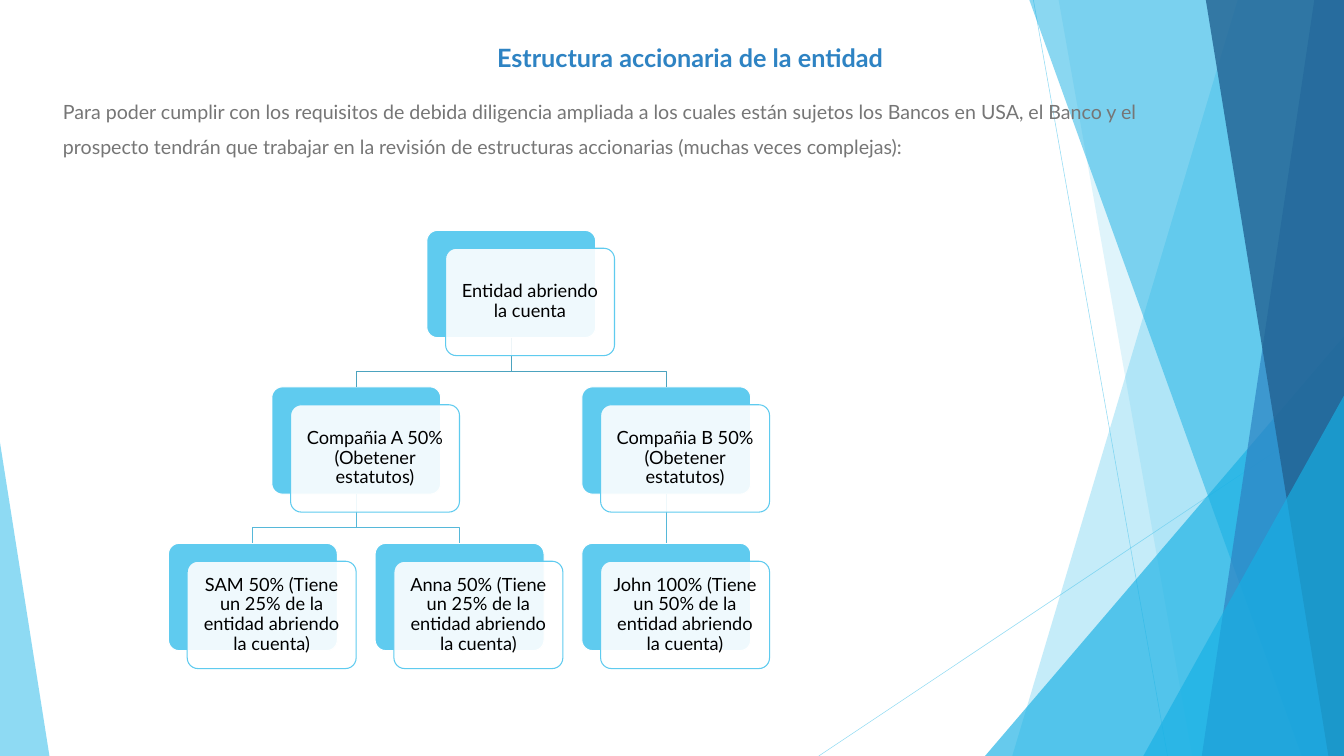
from lxml import etree
from pptx import Presentation
from pptx.dml.color import RGBColor
from pptx.enum.shapes import MSO_CONNECTOR, MSO_SHAPE
from pptx.enum.text import MSO_ANCHOR, MSO_AUTO_SIZE, PP_ALIGN
from pptx.oxml.ns import qn
from pptx.util import Inches, Pt

STRAIGHT = MSO_CONNECTOR.STRAIGHT
TRIANGLE, ROUNDED = MSO_SHAPE.ISOSCELES_TRIANGLE, MSO_SHAPE.ROUNDED_RECTANGLE
TOP, MIDDLE = MSO_ANCHOR.TOP, MSO_ANCHOR.MIDDLE
LEFT, CENTER = PP_ALIGN.LEFT, PP_ALIGN.CENTER
NO_AUTOFIT = MSO_AUTO_SIZE.NONE

SKY = RGBColor(0x5F, 0xCB, 0xEF)
CYAN = RGBColor(0x17, 0xB0, 0xE4)
BLUE = RGBColor(0x2E, 0x83, 0xC3)
NAVY = RGBColor(0x22, 0x62, 0x92)
UPPER_LINK = RGBColor(0x4C, 0xA3, 0xBF)
LOWER_LINK = RGBColor(0x56, 0xB8, 0xD9)
GREY = RGBColor(0x76, 0x76, 0x76)
WHITE = RGBColor(0xFF, 0xFF, 0xFF)
BLACK = RGBColor(0, 0, 0)

# Positions and sizes are percentages of the slide's width and height.
CARD_W, CARD_H = 12.57, 14.2
PANEL_DX, PANEL_DY = 1.4, 2.37
CHART_LEFT, CHART_TOP = 12.53, 30.47
COLUMN_STEP, ROW_STEP = 15.38, 20.7
BEND = 0.68  # share of the gap between rows at which a link turns

TITLE = "Estructura accionaria de la entidad"
INTRO = ("Para poder cumplir con los requisitos de debida diligencia ampliada a los cuales "
         "están sujetos los Bancos en USA, el Banco y el prospecto tendrán que trabajar en "
         "la revisión de estructuras accionarias (muchas veces complejas):")

# holder: (column, row, text)
HOLDERS = {
    "entity": (1.25, 0, "Entidad abriendo la cuenta"),
    "A": (0.5, 1, "Compañia A 50% (Obetener estatutos)"),
    "B": (2, 1, "Compañia B 50% (Obetener estatutos)"),
    "Sam": (0, 2, "SAM 50% (Tiene un 25% de la entidad abriendo la cuenta)"),
    "Anna": (1, 2, "Anna 50% (Tiene un 25% de la entidad abriendo la cuenta)"),
    "John": (2, 2, "John 100% (Tiene un 50% de la entidad abriendo la cuenta)"),
}
OWNERSHIP = [("entity", "A", UPPER_LINK), ("entity", "B", UPPER_LINK),
             ("A", "Sam", LOWER_LINK), ("A", "Anna", LOWER_LINK), ("B", "John", LOWER_LINK)]

# Bands reach the right edge: (left at top, left at bottom, colour, opacity)
BACK_BANDS = [(92.09, 75.32, SKY, 36), (78.77, 88.71, SKY, 20)]
FRONT_BANDS = [(76.59, 96.85, CYAN, 50), (97.79, 89.42, BLUE, 70), (89.72, 98.84, NAVY, 80)]


def set_opacity(element, percent):
    for colour in element.iter(qn("a:srgbClr")):
        etree.SubElement(colour, qn("a:alpha"), val=str(percent * 1000))


class SlideBuilder:
    font = "Lato"

    def __init__(self, prs):
        self.width, self.height = prs.slide_width, prs.slide_height
        self.slide = prs.slides.add_slide(prs.slide_layouts[1])
        self.shapes = self.slide.shapes

    def at(self, x, y):
        return round(self.width * x / 100), round(self.height * y / 100)

    def style(self, shape, fill=None, opacity=100, line=None):
        shape.shadow.inherit = False
        if fill is None:
            shape.fill.background()
        else:
            shape.fill.solid()
            shape.fill.fore_color.rgb = fill
            if opacity < 100:
                set_opacity(shape._element.spPr, opacity)
        if line is None:
            shape.line.fill.background()
        else:
            shape.line.color.rgb = line
            shape.line.width = Pt(1.5)

    def text(self, frame, words, size, colour, align, anchor, bold=False):
        frame.text = words
        frame.word_wrap = True
        frame.auto_size = NO_AUTOFIT
        frame.vertical_anchor = anchor
        paragraph = frame.paragraphs[0]
        paragraph.alignment = align
        font = paragraph.font
        font.name, font.size, font.bold = self.font, Pt(size), bold
        font.color.rgb = colour
        return paragraph

    def placeholder(self, index, box, words, size, colour, bold=False):
        """Fill a template placeholder and bring it in front of the background."""
        holder = self.slide.placeholders[index]
        holder.left, holder.top = self.at(*box[:2])
        holder.width, holder.height = self.at(*box[2:])
        self.shapes._spTree.append(holder._element)
        return self.text(holder.text_frame, words, size, colour, LEFT, TOP, bold)

    def shape(self, kind, box, adjustment, **look):
        shape = self.shapes.add_shape(kind, *self.at(*box[:2]), *self.at(*box[2:]))
        shape.adjustments[0] = adjustment
        self.style(shape, **look)
        return shape

    def outline(self, points, closed, **look):
        first, *rest = [self.at(*point) for point in points]
        builder = self.shapes.build_freeform(*first, scale=1.0)
        builder.add_line_segments(rest, close=closed)
        self.style(builder.convert_to_shape(), **look)

    def band(self, top_x, bottom_x, colour, opacity):
        self.outline([(top_x, 0), (100, 0), (100, 100), (bottom_x, 100)], True,
                     fill=colour, opacity=opacity)

    def line(self, start, end, colour, width):
        line = self.shapes.add_connector(STRAIGHT, *self.at(*start), *self.at(*end))
        line.line.color.rgb = colour
        line.line.width = Pt(width)
        etree.SubElement(line._element.spPr, qn("a:effectLst"))
        return line

    def card(self, x, y):
        return self.shape(ROUNDED, (x, y, CARD_W, CARD_H), 0.1, fill=SKY, line=WHITE)

    def panel(self, x, y, words):
        panel = self.shape(ROUNDED, (x + PANEL_DX, y + PANEL_DY, CARD_W, CARD_H), 0.1,
                           fill=WHITE, opacity=90, line=SKY)
        frame = panel.text_frame
        frame.margin_left = frame.margin_right = Inches(0.11)
        frame.margin_top = frame.margin_bottom = Inches(0.11)
        self.text(frame, words, 26, BLACK, CENTER, MIDDLE).line_spacing = 0.9

    def link(self, parent, child, cards, spots, colour):
        (x1, top), (x2, y2) = spots[parent], spots[child]
        x1, x2, y1 = x1 + CARD_W / 2, x2 + CARD_W / 2, top + CARD_H
        if x1 == x2:
            line = self.line((x1, y1), (x2, y2), colour, 1.5)
            line.begin_connect(cards[parent], 2)
            line.end_connect(cards[child], 0)
        else:
            bend = y1 + (y2 - y1) * BEND
            self.outline([(x1, y1), (x1, bend), (x2, bend), (x2, y2)], False, line=colour)


def draw_background(page):
    for start, end in [((76.89, 0), (86.87, 100)), ((100, 53.67), (60.92, 100))]:
        set_opacity(page.line(start, end, SKY, 0.75)._element.spPr, 70)
    for band in BACK_BANDS:
        page.band(*band)
    page.shape(TRIANGLE, (73.29, 44.47, 26.71, 55.53), 1, fill=CYAN, opacity=66)
    for band in FRONT_BANDS:
        page.band(*band)
    page.shape(TRIANGLE, (85.07, 52.33, 14.93, 47.67), 1, fill=CYAN, opacity=66)
    page.shape(TRIANGLE, (0, 58.53, 3.68, 41.47), 0, fill=SKY, opacity=70)


def draw_heading(page):
    page.placeholder(0, (36.61, 5.27, 34.21, 4.73), TITLE, 36, BLUE, bold=True)
    intro = page.placeholder(1, (4.31, 11.27, 85.78, 52.8), INTRO, 28, GREY)
    properties = intro._p.get_or_add_pPr()
    properties.set("marL", "0")
    properties.set("indent", "0")
    properties.find(qn("a:defRPr")).addprevious(etree.Element(qn("a:buNone")))
    intro.line_spacing = 1.5
    intro.space_before = Pt(20)


def draw_ownership(page):
    spots = {name: (CHART_LEFT + column * COLUMN_STEP, CHART_TOP + row * ROW_STEP)
             for name, (column, row, _) in HOLDERS.items()}
    cards = {name: page.card(*spot) for name, spot in spots.items()}
    for parent, child, colour in OWNERSHIP:
        page.link(parent, child, cards, spots, colour)
    for name, (_, _, words) in HOLDERS.items():
        page.panel(*spots[name], words)


def main():
    prs = Presentation()
    prs.slide_width, prs.slide_height = Inches(26.66), Inches(15)
    page = SlideBuilder(prs)
    draw_background(page)
    draw_heading(page)
    draw_ownership(page)
    prs.save("out.pptx")


if __name__ == "__main__":
    main()
